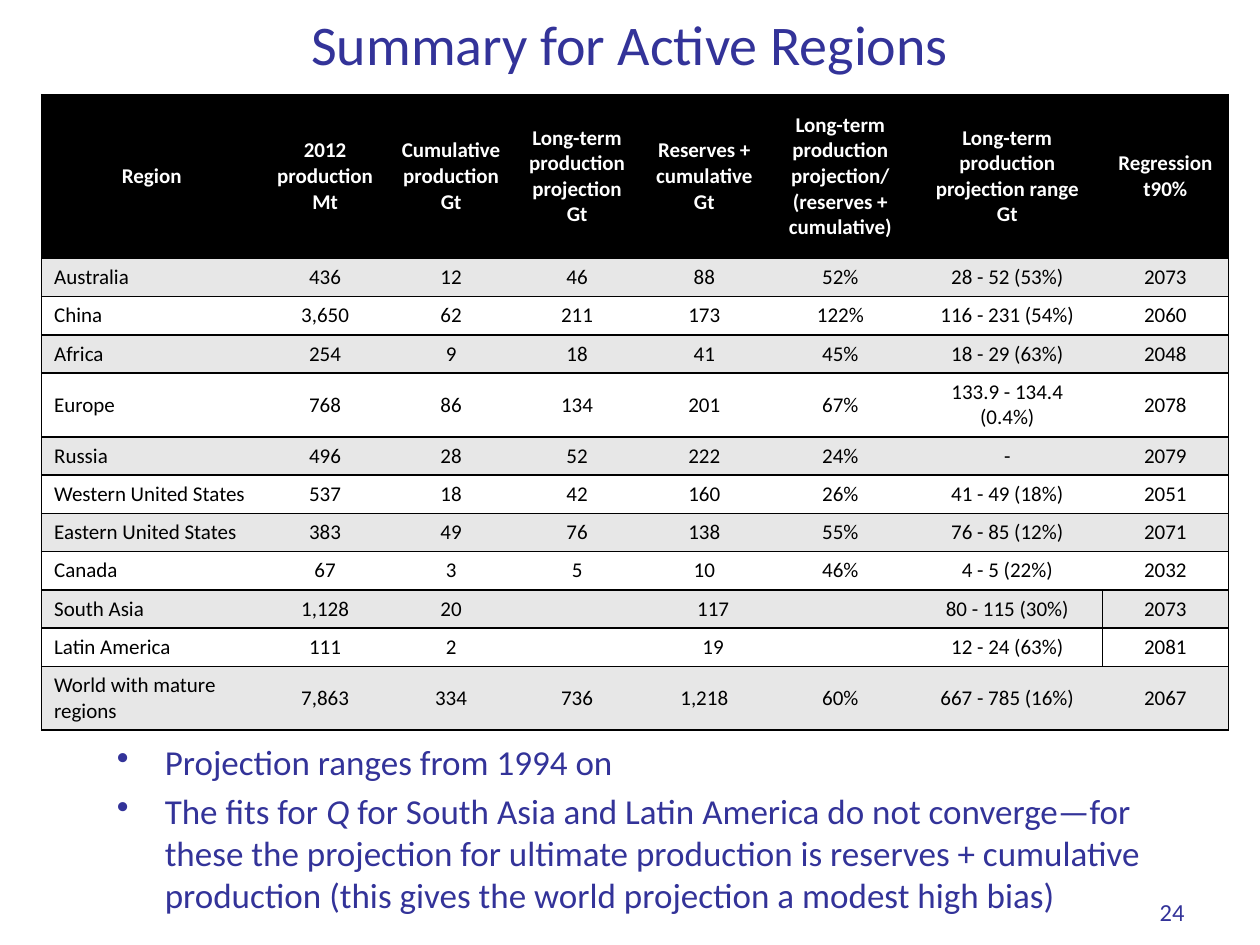
from dataclasses import dataclass
from typing import NamedTuple

from lxml import etree
from pptx import Presentation
from pptx.dml.color import RGBColor
from pptx.enum.text import MSO_ANCHOR, PP_ALIGN
from pptx.oxml.ns import qn
from pptx.util import Inches, Pt

LEFT, CENTER, RIGHT = PP_ALIGN.LEFT, PP_ALIGN.CENTER, PP_ALIGN.RIGHT
TOP, MIDDLE, BOTTOM = MSO_ANCHOR.TOP, MSO_ANCHOR.MIDDLE, MSO_ANCHOR.BOTTOM


@dataclass(frozen=True)
class Theme:
    font: str = "Calibri"
    accent: str = "333399"
    ink: str = "000000"
    paper: str = "FFFFFF"
    band: str = "E7E7E7"
    title_size: int = 32
    body_size: int = 20
    number_size: int = 14
    table_size: int = 12
    border_width: int = 1


class Box(NamedTuple):
    left: float
    top: float
    width: float
    height: float


class Region(NamedTuple):
    name: str
    production: str
    cumulative: str
    projection: str
    reserves: str | None  # None: the projection spans the reserves and ratio columns
    ratio: str | None
    projection_range: str
    regression: str


THEME = Theme()

HEADERS = [
    "Region", "2012 production Mt", "Cumulative production\vGt",
    "Long-term production projection\vGt", "Reserves + cumulative\vGt",
    "Long-term production projection/ (reserves + cumulative)",
    "Long-term production projection range\vGt", "Regression t90%",
]
REGIONS = [
    Region("Australia", "436", "12", "46", "88", "52%", "28 - 52 (53%)", "2073"),
    Region("China", "3,650", "62", "211", "173", "122%", "116 - 231 (54%)", "2060"),
    Region("Africa", "254", "9", "18", "41", "45%", "18 - 29 (63%)", "2048"),
    Region("Europe", "768", "86", "134", "201", "67%", "133.9 - 134.4 (0.4%)", "2078"),
    Region("Russia", "496", "28", "52", "222", "24%", "-", "2079"),
    Region("Western United States", "537", "18", "42", "160", "26%", "41 - 49 (18%)", "2051"),
    Region("Eastern United States", "383", "49", "76", "138", "55%", "76 - 85 (12%)", "2071"),
    Region("Canada", "67", "3", "5", "10", "46%", "4 - 5 (22%)", "2032"),
    Region("South Asia", "1,128", "20", "117", None, None, "80 - 115 (30%)", "2073"),
    Region("Latin America", "111", "2", "19", None, None, "12 - 24 (63%)", "2081"),
    Region("World with mature regions", "7,863", "334", "736", "1,218", "60%",
           "667 - 785 (16%)", "2067"),
]
TABLE_BOX = Box(0.33, 0.75, 9.42, 5)
COLUMN_WIDTHS = [1.75, 1, 1, 1, 1.02, 1.14, 1.51, 1]
HEADER_HEIGHT, ROW_HEIGHT, TALL_ROW_HEIGHT = 1.3, 0.29, 0.49
TALL_ROWS = {"Europe", "World with mature regions"}
SPAN_START, SPAN_END = 3, 5

# Each bullet is a list of (text, italic) runs
BULLETS = [
    [("Projection ranges from 1994 on", False)],
    [("The fits for ", False), ("Q", True),
     (" for South Asia and Latin America do not converge—for these the projection for "
      "ultimate production is reserves + cumulative production (this gives the world "
      "projection a modest high bias)", False)],
]


def style_paragraph(paragraph, size: int, color: str, align, bold: bool = False) -> None:
    paragraph.alignment = align
    font = paragraph.font
    font.name, font.size, font.bold = THEME.font, Pt(size), bold
    font.color.rgb = RGBColor.from_string(color)


def add_text_frame(slide, box: Box, anchor):
    frame = slide.shapes.add_textbox(*map(Inches, box)).text_frame
    frame.word_wrap = True
    frame.vertical_anchor = anchor
    return frame


def add_label(slide, box: Box, text: str, size: int, align, anchor):
    frame = add_text_frame(slide, box, anchor)
    frame.text = text
    style_paragraph(frame.paragraphs[0], size, THEME.accent, align)
    return frame


def set_borders(cell, drawn_sides: set[str]) -> None:
    properties = cell._tc.get_or_add_tcPr()
    for index, side in enumerate(("L", "R", "T", "B")):
        line = etree.Element(qn(f"a:ln{side}"), w=str(Pt(THEME.border_width)))
        if side in drawn_sides:
            fill = etree.SubElement(line, qn("a:solidFill"))
            etree.SubElement(fill, qn("a:srgbClr"), val=THEME.ink)
        else:
            etree.SubElement(line, qn("a:noFill"))
        properties.insert(index, line)


def add_bullet_list(slide, box: Box) -> None:
    frame = add_text_frame(slide, box, TOP)
    for index, runs in enumerate(BULLETS):
        paragraph = frame.paragraphs[0] if index == 0 else frame.add_paragraph()
        style_paragraph(paragraph, THEME.body_size, THEME.accent, LEFT)
        paragraph.space_before = Pt(0.2 * THEME.body_size)
        for text, italic in runs:
            run = paragraph.add_run()
            run.text = text
            if italic:
                run.font.italic = True
        properties = paragraph._p.get_or_add_pPr()
        properties.set("marL", str(Inches(0.38)))
        properties.set("indent", str(Inches(-0.38)))
        bullet = etree.Element(qn("a:buChar"), char="•")
        properties.find(qn("a:defRPr")).addprevious(bullet)


def add_region_table(slide) -> None:
    rows = [HEADERS, *REGIONS]
    last_column = len(HEADERS) - 1
    table = slide.shapes.add_table(len(rows), len(HEADERS), *map(Inches, TABLE_BOX)).table
    for column, width in zip(table.columns, COLUMN_WIDTHS):
        column.width = Inches(width)
    for row_index, values in enumerate(rows):
        is_header = row_index == 0
        spans = None in values
        height = TALL_ROW_HEIGHT if values[0] in TALL_ROWS else ROW_HEIGHT
        table.rows[row_index].height = Inches(HEADER_HEIGHT if is_header else height)
        background = THEME.ink if is_header else THEME.band if row_index % 2 else THEME.paper
        if spans:
            table.cell(row_index, SPAN_START).merge(table.cell(row_index, SPAN_END))
        for column_index, value in enumerate(values):
            cell = table.cell(row_index, column_index)
            cell.fill.solid()
            cell.fill.fore_color.rgb = RGBColor.from_string(background)
            sides = {"T", "B"}
            if column_index == 0 or (spans and column_index == last_column):
                sides.add("L")
            if column_index == last_column:
                sides.add("R")
            set_borders(cell, sides)
            if value is None:
                continue
            cell.text = value
            cell.vertical_anchor = MIDDLE
            style_paragraph(
                cell.text_frame.paragraphs[0], THEME.table_size,
                THEME.paper if is_header else THEME.ink,
                CENTER if is_header or column_index else LEFT, is_header)


def main() -> None:
    presentation = Presentation()
    presentation.slide_width, presentation.slide_height = Inches(10), Inches(7.5)
    slide = presentation.slides.add_slide(presentation.slide_layouts[6])

    # Results by region
    add_region_table(slide)

    # Title and remarks
    add_label(slide, Box(0.5, 0.08, 9, 0.53), "Summary for Active Regions",
              THEME.title_size, CENTER, MIDDLE)
    add_bullet_list(slide, Box(0.83, 5.83, 8.67, 1.58))

    # Slide number
    number = add_label(slide, Box(7.17, 6.83, 2.33, 0.52), "24",
                       THEME.number_size, RIGHT, BOTTOM)
    number.margin_bottom = 0

    presentation.save("out.pptx")


if __name__ == "__main__":
    main()
